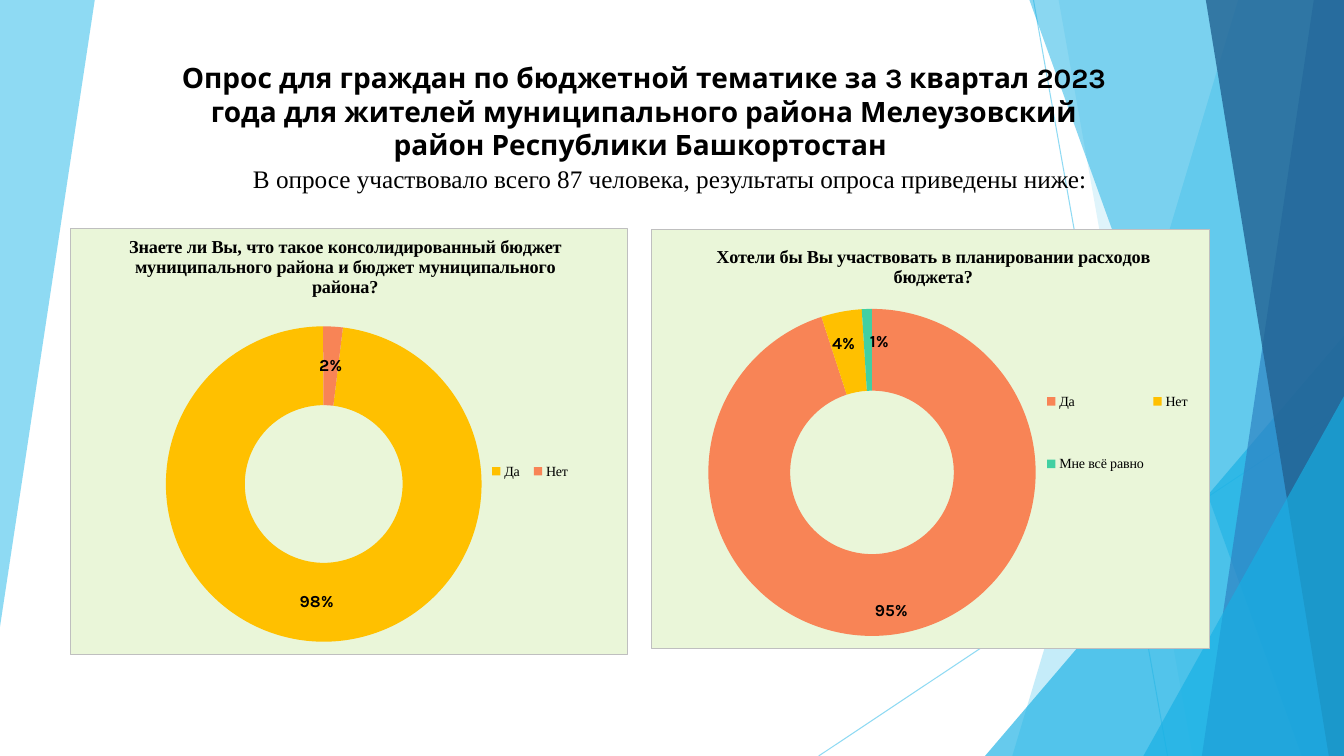
from lxml.etree import SubElement
from pptx import Presentation
from pptx.chart.data import CategoryChartData
from pptx.dml.color import RGBColor
from pptx.enum.chart import XL_CHART_TYPE, XL_LEGEND_POSITION
from pptx.enum.shapes import MSO_CONNECTOR, MSO_SHAPE
from pptx.enum.text import MSO_ANCHOR, MSO_AUTO_SIZE, PP_ALIGN
from pptx.oxml import parse_xml
from pptx.oxml.ns import nsdecls, qn
from pptx.util import Inches, Pt

WIDTH, HEIGHT = 13.33, 7.5
BLACK = RGBColor(0x00, 0x00, 0x00)
SKY = RGBColor(0x5F, 0xCB, 0xEF)
CYAN = RGBColor(0x17, 0xB0, 0xE4)
BLUE = RGBColor(0x2E, 0x83, 0xC3)
NAVY = RGBColor(0x22, 0x62, 0x92)
PALE_GREEN = RGBColor(0xEA, 0xF6, 0xD9)
GREY = RGBColor(0xBF, 0xBF, 0xBF)
YELLOW = RGBColor(0xFF, 0xC0, 0x00)
ORANGE = RGBColor(0xF8, 0x84, 0x56)
GREEN = RGBColor(0x42, 0xD0, 0xA2)
SANS, SERIF = "Karla", "Times New Roman"


def set_font(font, color=BLACK, **values):
    for name, value in values.items():
        setattr(font, name, value)
    font.color.rgb = color


def set_opacity(shape, percent):
    for color in shape.element.xpath("./p:spPr//a:srgbClr"):
        SubElement(color, qn("a:alpha"), val=str(percent * 1000))


def paint(shape, color, opacity):
    shape.shadow.inherit = False
    shape.fill.solid()
    shape.fill.fore_color.rgb = color
    shape.line.fill.background()
    set_opacity(shape, opacity)


def add_facet(slide, corners, color, opacity):
    points = [(Inches(x), Inches(y)) for x, y in corners]
    builder = slide.shapes.build_freeform(*points[0], scale=1.0)
    builder.add_line_segments(points[1:], close=True)
    paint(builder.convert_to_shape(), color, opacity)


def add_ray(slide, start, end):
    ray = slide.shapes.add_connector(
        MSO_CONNECTOR.STRAIGHT, *(Inches(value) for value in start + end))
    ray.line.color.rgb = SKY
    ray.line.width = Pt(0.75)
    SubElement(ray.element.spPr, qn("a:effectLst"))
    set_opacity(ray, 70)


def add_corner_triangle(slide, left, top):
    triangle = slide.shapes.add_shape(
        MSO_SHAPE.ISOSCELES_TRIANGLE, Inches(left), Inches(top),
        Inches(WIDTH - left), Inches(HEIGHT - top))
    triangle.adjustments[0] = 1
    paint(triangle, CYAN, 66)


def add_right_facet(slide, top_left, bottom_left, color, opacity):
    corners = [(top_left, 0), (WIDTH, 0), (WIDTH, HEIGHT), (bottom_left, HEIGHT)]
    add_facet(slide, corners, color, opacity)


def add_backdrop(slide):
    add_facet(slide, [(0, 0), (0.94, 0), (0, 6.22)], SKY, 70)
    add_ray(slide, (10.25, 0), (11.58, HEIGHT))
    add_ray(slide, (WIDTH, 4.03), (8.12, HEIGHT))
    add_right_facet(slide, 12.28, 10.04, SKY, 36)
    add_right_facet(slide, 10.5, 11.83, SKY, 20)
    add_corner_triangle(slide, 9.77, 3.33)
    add_right_facet(slide, 10.21, 12.91, CYAN, 50)
    add_right_facet(slide, 13.03, 11.92, BLUE, 70)
    add_right_facet(slide, 11.96, 13.18, NAVY, 80)
    add_corner_triangle(slide, 11.34, 3.93)


def write_line(frame, text, anchor, **font_values):
    frame.word_wrap = True
    frame.auto_size = MSO_AUTO_SIZE.NONE
    frame.vertical_anchor = anchor
    paragraph = frame.paragraphs[0]
    paragraph.alignment = PP_ALIGN.CENTER
    run = paragraph.add_run()
    run.text = text
    set_font(run.font, **font_values)


def add_heading(slide, left, top, width):
    heading = slide.shapes.title
    heading.element.getparent().append(heading.element)
    places = dict(left=left, top=top, width=width, height=1.06)
    for name, value in places.items():
        setattr(heading, name, Inches(value))
    write_line(
        heading.text_frame,
        "Опрос для граждан по бюджетной тематике за 3 квартал 2023 года для жителей "
        "муниципального района Мелеузовский район Республики Башкортостан ",
        MSO_ANCHOR.BOTTOM, name=SANS, size=Pt(20), bold=True)
    summary = slide.shapes.add_textbox(
        Inches(left + 0.35), Inches(top + 0.98), Inches(9.45), Inches(0.4))
    write_line(
        summary.text_frame,
        "В опросе участвовало всего 87 человека, результаты опроса приведены ниже:",
        MSO_ANCHOR.TOP, name=SERIF, size=Pt(18))


def place_part(part, after, modes=("xMode", "yMode"), **fractions):
    for previous in part.findall(qn("c:layout")):
        part.remove(previous)
    layout = parse_xml(f"<c:layout {nsdecls('c')}><c:manualLayout/></c:layout>")
    for name in modes:
        SubElement(layout[0], qn(f"c:{name}"), val="edge")
    for name, value in fractions.items():
        SubElement(layout[0], qn(f"c:{name}"), val=str(value))
    if after:
        part.find(qn(after)).addnext(layout)
    else:
        part.insert(0, layout)


def fill_chart_area(chart):
    chart.element.find(qn("c:chart")).addnext(parse_xml(
        f"<c:spPr {nsdecls('c', 'a')}>"
        f'<a:solidFill><a:srgbClr val="{PALE_GREEN}"/></a:solidFill>'
        f'<a:ln w="{Pt(0.75)}"><a:solidFill><a:srgbClr val="{GREY}"/></a:solidFill></a:ln>'
        "</c:spPr>"))


def label_slices(chart, series, shifts):
    labels = series.data_labels
    label_values = dict(show_percentage=True, show_value=False,
                        number_format="0%", number_format_is_linked=False)
    for name, value in label_values.items():
        setattr(labels, name, value)
    label_font = dict(name=SANS, size=Pt(12), bold=True)
    set_font(labels.font, **label_font)
    for index in range(len(shifts)):
        set_font(series.points[index].data_label.font, **label_font)
    for label, (x, y) in zip(chart.element.iter(qn("c:dLbl")), shifts):
        label.find(qn("c:showVal")).set("val", "0")
        label.find(qn("c:showPercent")).set("val", "1")
        place_part(label, "c:idx", modes=(), x=x, y=y)


def add_survey_chart(slide, box, question, answers, start, places, shifts=()):
    data = CategoryChartData()
    data.categories = [answer for answer, _, _ in answers]
    data.add_series("Series 1", [share for _, share, _ in answers])
    chart = slide.shapes.add_chart(
        XL_CHART_TYPE.DOUGHNUT, *(Inches(value) for value in box), data).chart
    set_font(chart.font, name=SANS, size=Pt(10))
    fill_chart_area(chart)

    chart.has_title = True
    title_run = chart.chart_title.text_frame.paragraphs[0].add_run()
    title_run.text = question
    set_font(title_run.font, name=SERIF, size=Pt(13), bold=True)

    chart.has_legend = True
    chart.legend.position = XL_LEGEND_POSITION.RIGHT
    chart.legend.include_in_layout = False
    set_font(chart.legend.font, name=SERIF, size=Pt(10))

    plot = chart.plots[0]
    plot.vary_by_categories = True
    for index, (_, _, color) in enumerate(answers):
        slice_fill = plot.series[0].points[index].format.fill
        slice_fill.solid()
        slice_fill.fore_color.rgb = color
    label_slices(chart, plot.series[0], shifts)
    for angle in chart.element.iter(qn("c:firstSliceAng")):
        angle.set("val", str(start))

    parts = {"title": "c:tx", "plotArea": None, "legend": "c:legendPos"}
    for name, after in parts.items():
        part = chart.element.find(qn("c:chart")).find(qn(f"c:{name}"))
        place_part(part, after, **places[name])


def main():
    presentation = Presentation()
    presentation.slide_width = Inches(WIDTH)
    presentation.slide_height = Inches(HEIGHT)
    slide = presentation.slides.add_slide(presentation.slide_layouts[5])
    add_backdrop(slide)
    add_heading(slide, 1.57, 0.59, 9.63)
    add_survey_chart(
        slide, (6.46, 2.27, 5.54, 4.17),
        "Хотели бы Вы участвовать в планировании расходов бюджета?",
        [("Да", 95, ORANGE), ("Нет", 4, YELLOW), ("Мне всё равно", 1, GREEN)], 0,
        {"title": dict(x=0.11, y=0.03),
         "plotArea": dict(x=0.1, y=0.19, w=0.59, h=0.78),
         "legend": dict(x=0.7, y=0.28, w=0.27, h=0.41)},
        [(0, 0.04), (-0.01, -0.02), (0.02, -0.02)])
    add_survey_chart(
        slide, (0.69, 2.26, 5.54, 4.24),
        "Знаете ли Вы, что такое консолидированный бюджет муниципального района "
        "и бюджет муниципального района?",
        [("Да", 98, YELLOW), ("Нет", 2, ORANGE)], 7,
        {"title": dict(x=0.1, y=0.01),
         "plotArea": dict(x=0.17, y=0.23, w=0.57, h=0.74),
         "legend": dict(x=0.74, y=0.53, w=0.17, h=0.08)})
    presentation.save("out.pptx")


if __name__ == "__main__":
    main()
